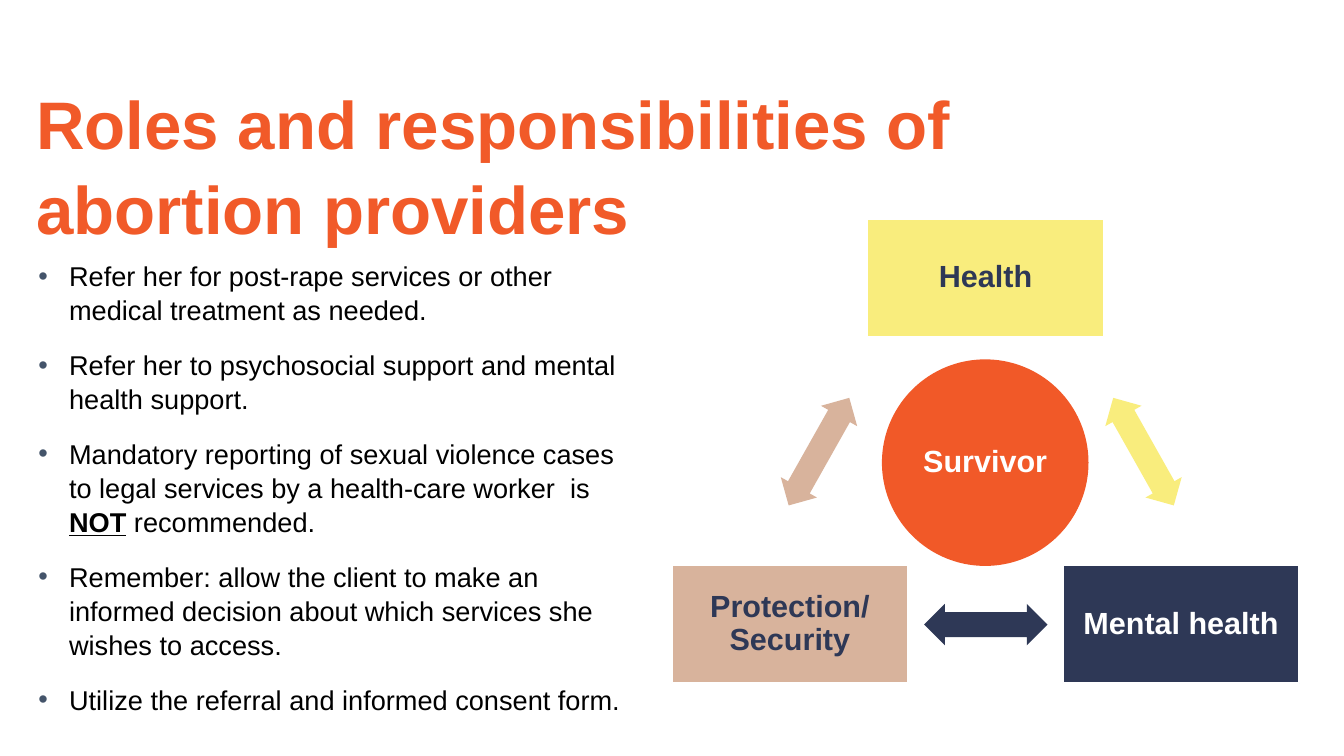
from dataclasses import dataclass

from lxml.etree import SubElement as Sub
from pptx import Presentation
from pptx.dml.color import RGBColor as RGB
from pptx.enum.shapes import MSO_SHAPE as Kind
from pptx.enum.text import MSO_ANCHOR as Anchor, PP_ALIGN as Align
from pptx.oxml.ns import qn
from pptx.util import Inches, Pt


@dataclass(frozen=True)
class Theme:
    font: str = "Arial"
    title: float = 79.2
    body: int = 32
    label: int = 36
    orange: str = "F15A29"
    core: str = "F15928"
    yellow: str = "F9ED7D"
    navy: str = "2E3856"
    tan: str = "D8B39C"
    slate: str = "44546A"
    white: str = "FFFFFF"
    black: str = "000000"


T = Theme()

# Each point is a list of runs; a run in a tuple is stressed
POINTS = [
    ["Refer her for post-rape services or other medical treatment as needed."],
    ["Refer her to psychosocial support and mental health support."],
    ["Mandatory reporting of sexual violence cases to legal services by a "
     "health-care worker  is ", ("NOT",), " recommended."],
    ["Remember: allow the client to make an informed decision about which "
     "services she wishes to access."],
    ["Utilize the referral and informed consent form."],
]

# Label, left, top, fill, text colour
BOXES = [
    ("Health", 14.19, 3.58, T.yellow, T.navy),
    ("Mental health", 17.39, 9.25, T.navy, T.white),
    ("Protection/\nSecurity", 10.99, 9.25, T.tan, T.navy),
]

# Left, top, turn, fill
ARROWS = [
    (17.7, 7.05, 60.6, T.yellow),
    (15.12, 9.88, 180, T.navy),
    (12.39, 7.05, 299.4, T.tan),
]


def bullet(para):
    props = para._p.get_or_add_pPr()
    props.set("marL", str(Inches(0.5)))
    props.set("indent", str(-Inches(0.5)))
    tint = Sub(props, qn("a:buClr"))
    Sub(tint, qn("a:srgbClr"), val=T.slate)
    Sub(props, qn("a:buFont"), typeface=T.font)
    Sub(props, qn("a:buChar"), char="•")


def write(para, text, size, color, bold=False, line=False):
    for i, part in enumerate(text.split("\n")):
        if i:
            para.add_line_break()
        run = para.add_run()
        run.text = part
        font = run.font
        font.name, font.size = T.font, Pt(size)
        font.bold, font.underline = bold, line
        font.color.rgb = RGB.from_string(color)


def frame(shape, inset, anchor):
    text = shape.text_frame
    text.word_wrap = True
    text.vertical_anchor = anchor
    text.margin_left = text.margin_right = Inches(inset)
    text.margin_top = text.margin_bottom = Inches(inset)
    return text


def place(shape, *area):
    shape.left, shape.top, shape.width, shape.height = map(Inches, area)


def block(slide, kind, area, fill, edge=None):
    shape = slide.shapes.add_shape(kind, *map(Inches, area))
    shape.shadow.inherit = False
    shape.fill.solid()
    shape.fill.fore_color.rgb = RGB.from_string(fill)
    if edge:
        shape.line.color.rgb = RGB.from_string(edge)
        shape.line.width = Pt(2)
    else:
        shape.line.fill.background()
    return shape


def label(shape, text, color, inset):
    para = frame(shape, inset, Anchor.MIDDLE).paragraphs[0]
    para.alignment = Align.CENTER
    para.line_spacing = 0.9
    write(para, text, T.label, color, bold=True)


def arrow(slide, left, top, turn, fill):
    shape = block(slide, Kind.LEFT_RIGHT_ARROW, (left, top, 2.02, 0.68), fill)
    shape.adjustments[0] = 0.6
    shape.adjustments[1] = 0.5
    shape.rotation = turn


def head(slide, text):
    title = slide.shapes.title
    place(title, 0.49, 1.18, 16.83, 3.02)
    para = frame(title, 0.1, Anchor.TOP).paragraphs[0]
    para.alignment = Align.LEFT
    para.line_spacing = 1.05
    write(para, text, T.title, T.orange, bold=True)


def points(slide, items):
    area = map(Inches, (0.63, 4.22, 9.81, 7.61))
    text = frame(slide.shapes.add_textbox(*area), 0, Anchor.TOP)
    for i, item in enumerate(items):
        para = text.add_paragraph() if i else text.paragraphs[0]
        bullet(para)
        para.line_spacing = 1.05
        para.space_after = Pt(24)
        for part in item:
            loud = isinstance(part, tuple)
            write(para, part[0] if loud else part, T.body, T.black,
                  bold=loud, line=loud)


def main():
    deck = Presentation()
    deck.slide_width, deck.slide_height = Inches(21.99), Inches(12.37)
    slide = deck.slides.add_slide(deck.slide_layouts[5])

    # Title and advice
    head(slide, "Roles and responsibilities of abortion providers")
    points(slide, POINTS)

    # Ring of services
    for text, left, top, fill, color in BOXES:
        box = block(slide, Kind.RECTANGLE, (left, top, 3.87, 1.93),
                    fill, T.white)
        label(box, text, color, 0.15)
    for item in ARROWS:
        arrow(slide, *item)

    # Survivor at the centre
    core = block(slide, Kind.OVAL, (14.43, 5.88, 3.38, 3.38), T.core)
    label(core, "Survivor", T.white, 0.1)

    deck.save("out.pptx")


if __name__ == "__main__":
    main()
